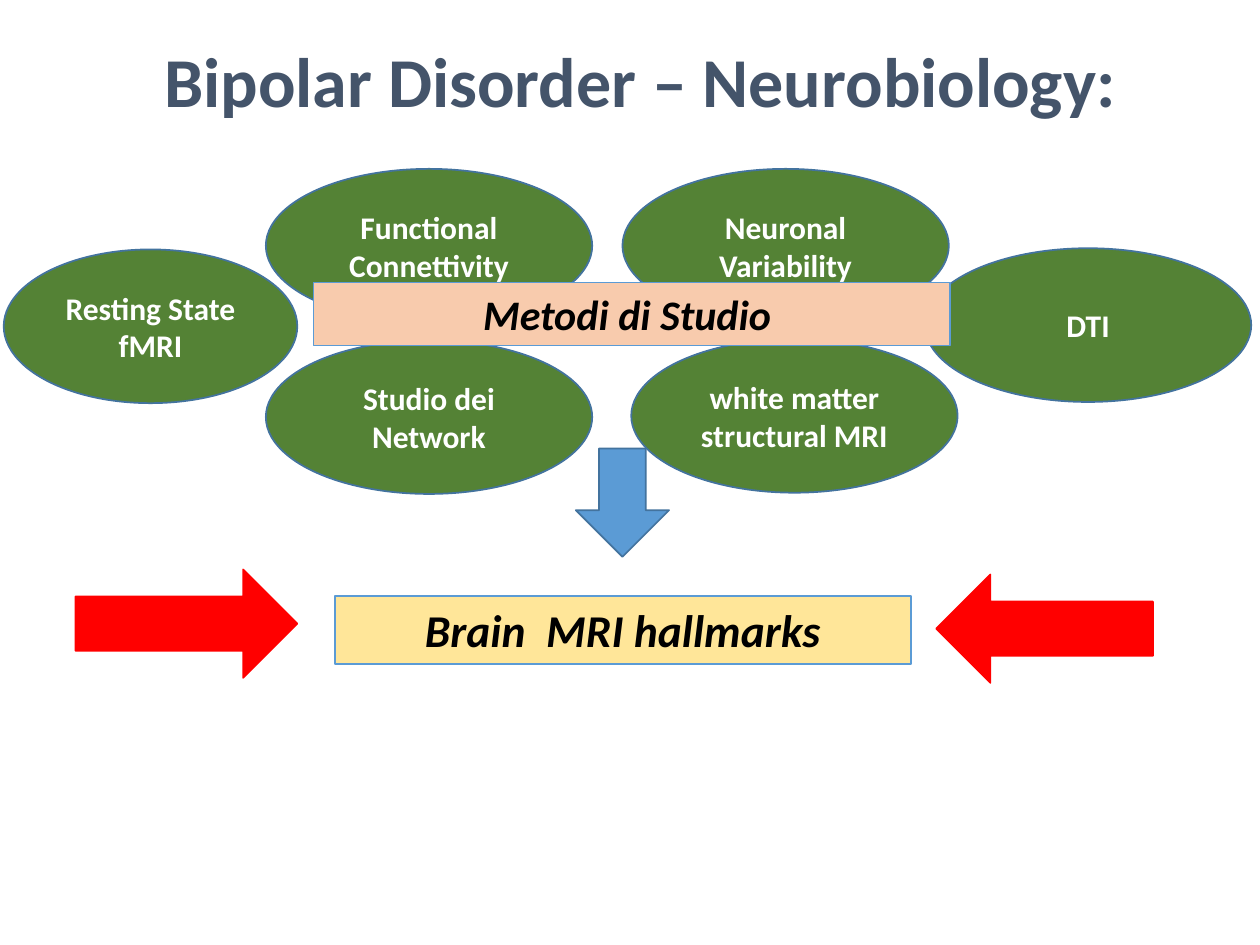
from dataclasses import dataclass

from pptx import Presentation
from pptx.dml.color import RGBColor as RGB
from pptx.enum.shapes import MSO_SHAPE as Preset
from pptx.enum.text import MSO_ANCHOR as Anchor, MSO_AUTO_SIZE as AutoSize, PP_ALIGN as Align
from pptx.util import Inches, Pt


@dataclass(frozen=True)
class Theme:
    font: str = "Calibri"
    white: str = "FFFFFF"
    black: str = "000000"
    slate: str = "44546A"
    green: str = "548235"
    peach: str = "F8CBAD"
    yellow: str = "FFE699"
    blue: str = "5B9BD5"
    dark_blue: str = "43739E"
    red: str = "FF0000"
    title_size: int = 40
    hallmark_size: int = 26
    heading_size: int = 24
    method_size: int = 18


class SlideBuilder:
    """Draws the elements of one slide in a shared theme."""

    def __init__(self, slide, theme):
        self.slide = slide
        self.theme = theme

    def paint(self, element, fill, outline=None, width=1):
        element.fill.solid()
        element.fill.fore_color.rgb = RGB.from_string(fill)
        if outline:
            element.line.color.rgb = RGB.from_string(outline)
            element.line.width = Pt(width)

    def add_wording(self, element, wording, size, color, italic=False):
        element.text_frame.word_wrap = True
        paragraph = element.text_frame.paragraphs[0]
        paragraph.alignment = Align.CENTER
        run = paragraph.add_run()
        run.text = wording
        run.font.name = self.theme.font
        run.font.size = Pt(size)
        run.font.bold = True
        run.font.italic = italic
        run.font.color.rgb = RGB.from_string(color)

    def banner(self, wording, box, size, color, fill, outline=None, italic=False):
        label = self.slide.shapes.add_textbox(*map(Inches, box))
        self.paint(label, fill, outline, 0.75)
        self.add_wording(label, wording, size, color, italic)
        label.text_frame.auto_size = AutoSize.SHAPE_TO_FIT_TEXT

    def preset(self, kind, box, fill, outline):
        figure = self.slide.shapes.add_shape(kind, *map(Inches, box))
        figure.shadow.inherit = False
        self.paint(figure, fill, outline)
        return figure

    def method(self, wording, left, top, width=2.59, height=1.22):
        theme = self.theme
        oval = self.preset(Preset.OVAL, (left, top, width, height), theme.green, theme.dark_blue)
        oval.text_frame.vertical_anchor = Anchor.MIDDLE
        self.add_wording(oval, wording, theme.method_size, theme.white)


def main():
    theme = Theme()
    deck = Presentation()
    deck.slide_width, deck.slide_height = Inches(10), Inches(7.5)
    builder = SlideBuilder(deck.slides.add_slide(deck.slide_layouts[6]), theme)

    builder.banner("Bipolar Disorder – Neurobiology:", (1.02, 0.25, 8.12, 0.77),
                   theme.title_size, theme.slate, theme.white)
    builder.banner("Brain  MRI hallmarks", (2.66, 4.73, 4.57, 0.54),
                   theme.hallmark_size, theme.black, theme.yellow, theme.blue, italic=True)

    builder.method("Resting State fMRI", 0.03, 1.98, width=2.33)
    for wording, left, top in (
        ("Functional Connettivity", 2.11, 1.34),
        ("Neuronal Variability", 4.94, 1.34),
        ("DTI", 7.34, 1.97),
        ("Studio dei Network", 2.11, 2.7),
        ("white matter structural MRI", 5.01, 2.69),
    ):
        builder.method(wording, left, top)

    builder.banner("Metodi di Studio ", (2.49, 2.24, 5.05, 0.5),
                   theme.heading_size, theme.black, theme.peach, theme.blue, italic=True)

    builder.preset(Preset.DOWN_ARROW, (4.57, 3.56, 0.74, 0.86), theme.blue, theme.dark_blue)
    builder.preset(Preset.RIGHT_ARROW, (0.6, 4.52, 1.76, 0.86), theme.red, theme.red)
    builder.preset(Preset.LEFT_ARROW, (7.43, 4.56, 1.72, 0.86), theme.red, theme.red)

    deck.save("out.pptx")


if __name__ == "__main__":
    main()
